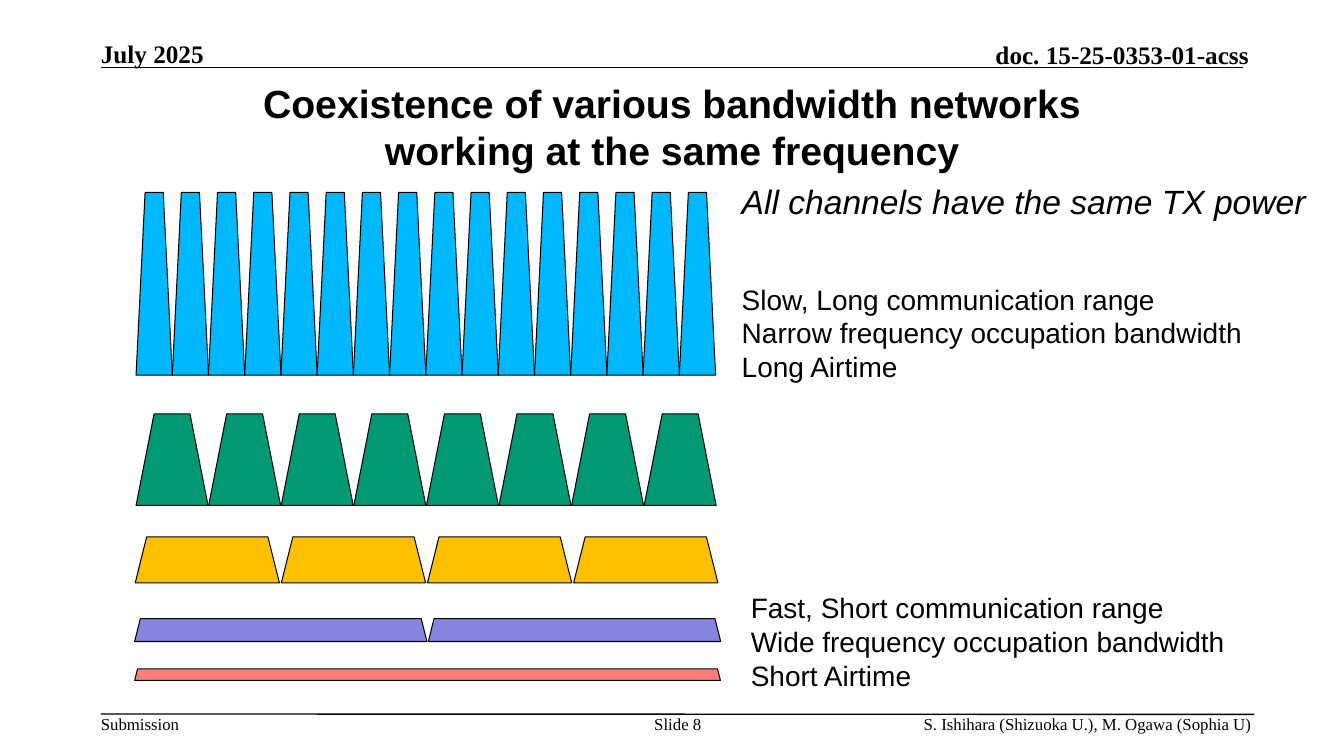
from dataclasses import dataclass

from lxml.etree import SubElement
from pptx import Presentation
from pptx.dml.color import RGBColor
from pptx.enum.shapes import MSO_CONNECTOR, MSO_SHAPE
from pptx.enum.text import MSO_ANCHOR, MSO_AUTO_SIZE, PP_ALIGN
from pptx.oxml.ns import qn
from pptx.util import Pt


@dataclass(frozen=True)
class Theme:
    """Colours, fonts and type sizes of the slide."""
    ink: RGBColor = RGBColor(0, 0, 0)
    blue: RGBColor = RGBColor(0x00, 0xB8, 0xFF)
    green: RGBColor = RGBColor(0x00, 0x99, 0x73)
    amber: RGBColor = RGBColor(0xFF, 0xC0, 0x00)
    violet: RGBColor = RGBColor(0x85, 0x85, 0xE0)
    coral: RGBColor = RGBColor(0xFF, 0x7E, 0x79)
    sans: str = "Arial"
    serif: str = "Times New Roman"
    title: int = 28
    lead: int = 24
    note: int = 20
    header: int = 18
    footer: int = 12


THEME = Theme()


def apply_format(target, values):
    """Set each attribute in values on target."""
    for attribute, value in values.items():
        setattr(target, attribute, value)


def fill_text(frame, wording, align, size, **font):
    """Write the wording and format every paragraph."""
    frame.text = wording
    font = {"name": THEME.sans, "size": Pt(size), **font}
    for paragraph in frame.paragraphs:
        paragraph.alignment = align
        for run in paragraph.runs:
            apply_format(run.font, font)
            run.font.color.rgb = THEME.ink


def add_title(slide, wording):
    """Place the two-line title in its placeholder."""
    heading = slide.shapes.title
    apply_format(heading, {"left": Pt(72), "top": Pt(54), "width": Pt(816), "height": Pt(72)})
    apply_format(heading.text_frame, {"vertical_anchor": MSO_ANCHOR.MIDDLE, "word_wrap": True,
                                      "auto_size": MSO_AUTO_SIZE.NONE})
    fill_text(heading.text_frame, wording, PP_ALIGN.CENTER, THEME.title, bold=True)


def add_note(slide, wording, box, size, **font):
    """Add an unwrapped remark beside the channels."""
    note = slide.shapes.add_textbox(*map(Pt, box)).text_frame
    apply_format(note, {"word_wrap": False, "auto_size": MSO_AUTO_SIZE.SHAPE_TO_FIT_TEXT})
    fill_text(note, wording, PP_ALIGN.LEFT, size, **font)


def add_margin_text(slide, wording, box, align, size, wrap=True, anchor=MSO_ANCHOR.TOP, bold=False):
    """Add a header or footer entry without insets."""
    entry = slide.shapes.add_textbox(*map(Pt, box)).text_frame
    apply_format(entry, {"word_wrap": wrap, "vertical_anchor": anchor, "margin_left": 0,
                         "margin_right": 0, "margin_top": 0, "margin_bottom": 0})
    fill_text(entry, wording, align, size, name=THEME.serif, bold=bold)


def add_rule(slide, start, end):
    """Draw a black rule between two points."""
    rule = slide.shapes.add_connector(MSO_CONNECTOR.STRAIGHT, *map(Pt, start + end))
    rule.line.color.rgb = THEME.ink
    rule.line.width = Pt(1)
    SubElement(rule._element.spPr, qn("a:effectLst"))


def add_channels(slide, count, left, top, width, height, pitch, colour):
    """Draw a row of equally spaced trapezoid channels."""
    for index in range(count):
        channel = slide.shapes.add_shape(MSO_SHAPE.TRAPEZOID, Pt(left + index * pitch), Pt(top),
                                         Pt(width), Pt(height))
        channel.shadow.inherit = False
        channel.fill.solid()
        channel.fill.fore_color.rgb = colour
        channel.line.color.rgb = THEME.ink
        channel.line.width = Pt(0.75)


def main():
    """Build the slide and save it."""
    deck = Presentation()
    apply_format(deck, {"slide_width": Pt(960), "slide_height": Pt(540)})
    slide = deck.slides.add_slide(deck.slide_layouts[5])

    add_rule(slide, (72, 48.3), (888, 48.3))
    add_rule(slide, (72, 510), (896, 510.3))
    add_margin_text(slide, "July 2025", (72, 27.4, 126, 21.6), PP_ALIGN.LEFT, THEME.header, bold=True)
    add_margin_text(slide, "doc. 15-25-0353-01-acss", (525, 28, 367, 21.6), PP_ALIGN.RIGHT,
                    THEME.header, anchor=MSO_ANCHOR.BOTTOM, bold=True)
    add_margin_text(slide, "Submission", (72, 510, 57, 14.4), PP_ALIGN.LEFT, THEME.footer, wrap=False)
    add_margin_text(slide, "Slide 8", (456.5, 510, 55.4, 28.8), PP_ALIGN.CENTER, THEME.footer)
    add_margin_text(slide, "S. Ishihara (Shizuoka U.), M. Ogawa (Sophia U)", (657, 510, 237, 14.4),
                    PP_ALIGN.RIGHT, THEME.footer, wrap=False)
    add_title(slide, "Coexistence of various bandwidth networks\vworking at the same frequency")

    add_channels(slide, 16, 97.2, 137.5, 25.9, 130.5, 25.87, THEME.blue)
    add_channels(slide, 8, 97.2, 295.7, 51.4, 65.3, 51.85, THEME.green)
    add_channels(slide, 4, 96.6, 383.5, 103, 32.8, 104.4, THEME.amber)
    add_channels(slide, 2, 96.2, 441.8, 208.8, 16.4, 209.8, THEME.violet)
    add_channels(slide, 1, 96.2, 477.8, 418.4, 8.2, 0, THEME.coral)

    add_note(slide, "All channels have the same TX power", (522.7, 126, 421.2, 36), THEME.lead, italic=True)
    add_note(slide, "Slow, Long communication range\nNarrow frequency occupation bandwidth\nLong Airtime",
             (522.7, 198, 375.1, 80), THEME.note)
    add_note(slide, "Fast, Short communication range\nWide frequency occupation bandwidth\nShort Airtime",
             (529.2, 418.5, 362.2, 80), THEME.note)
    deck.save("out.pptx")


if __name__ == "__main__":
    main()
